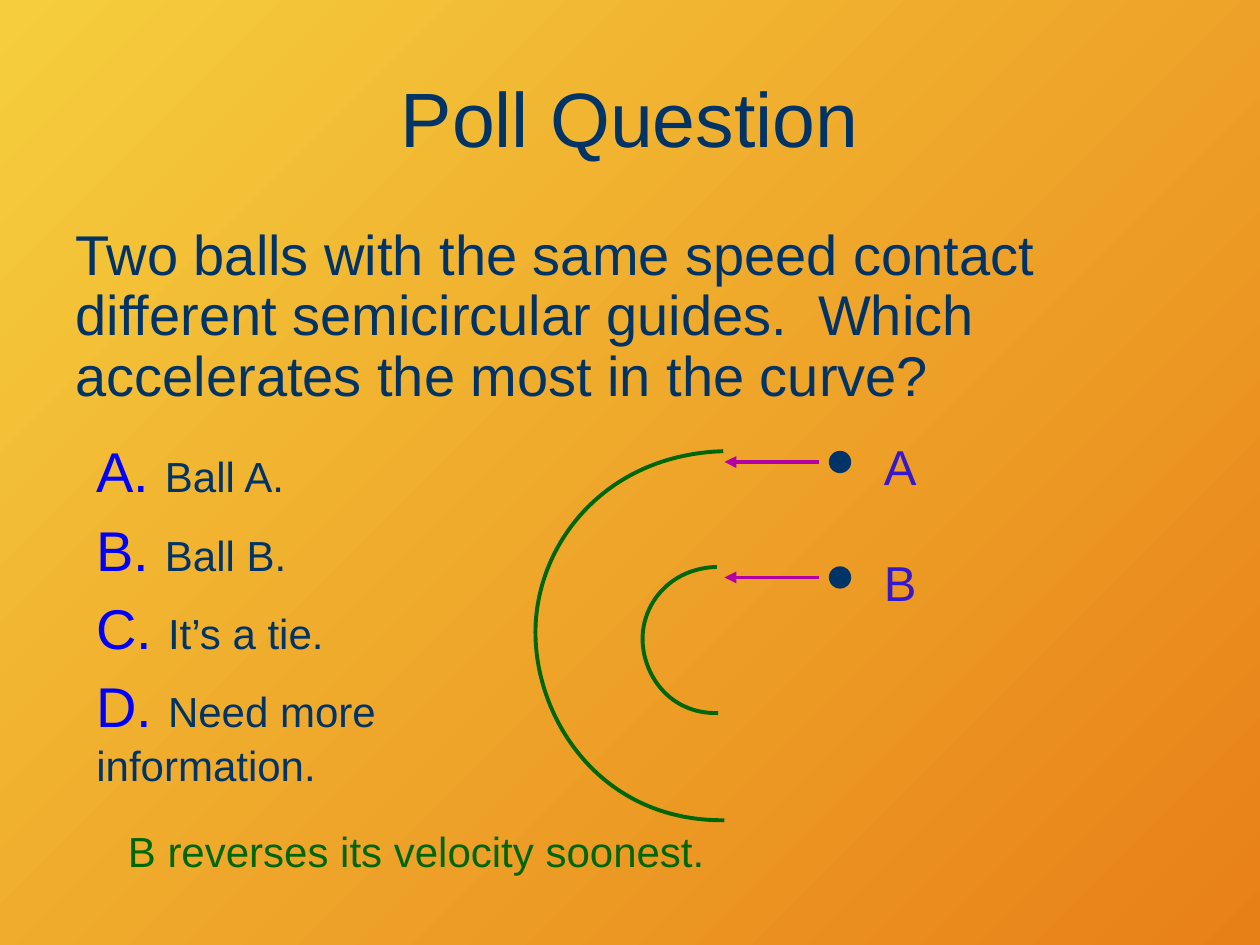
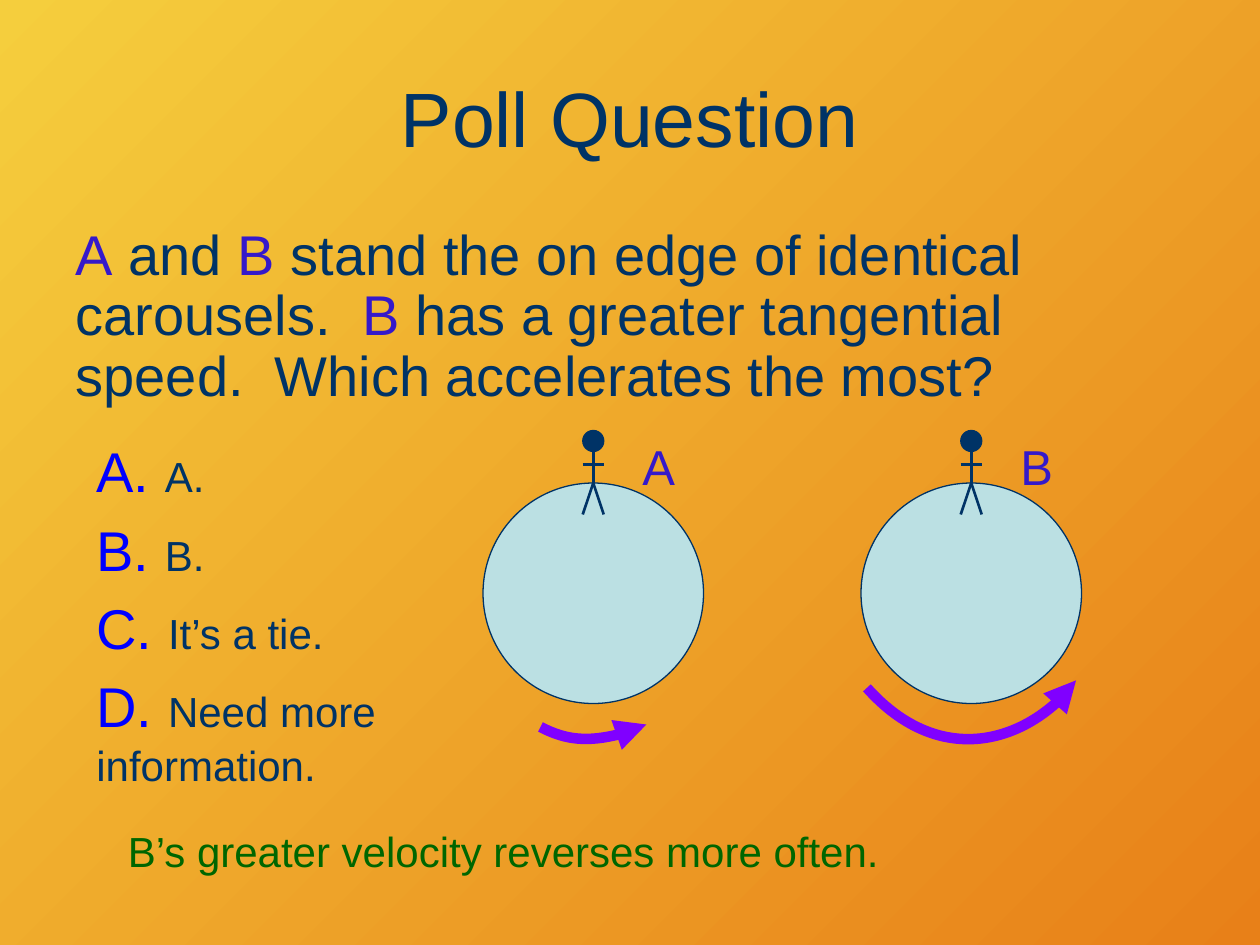
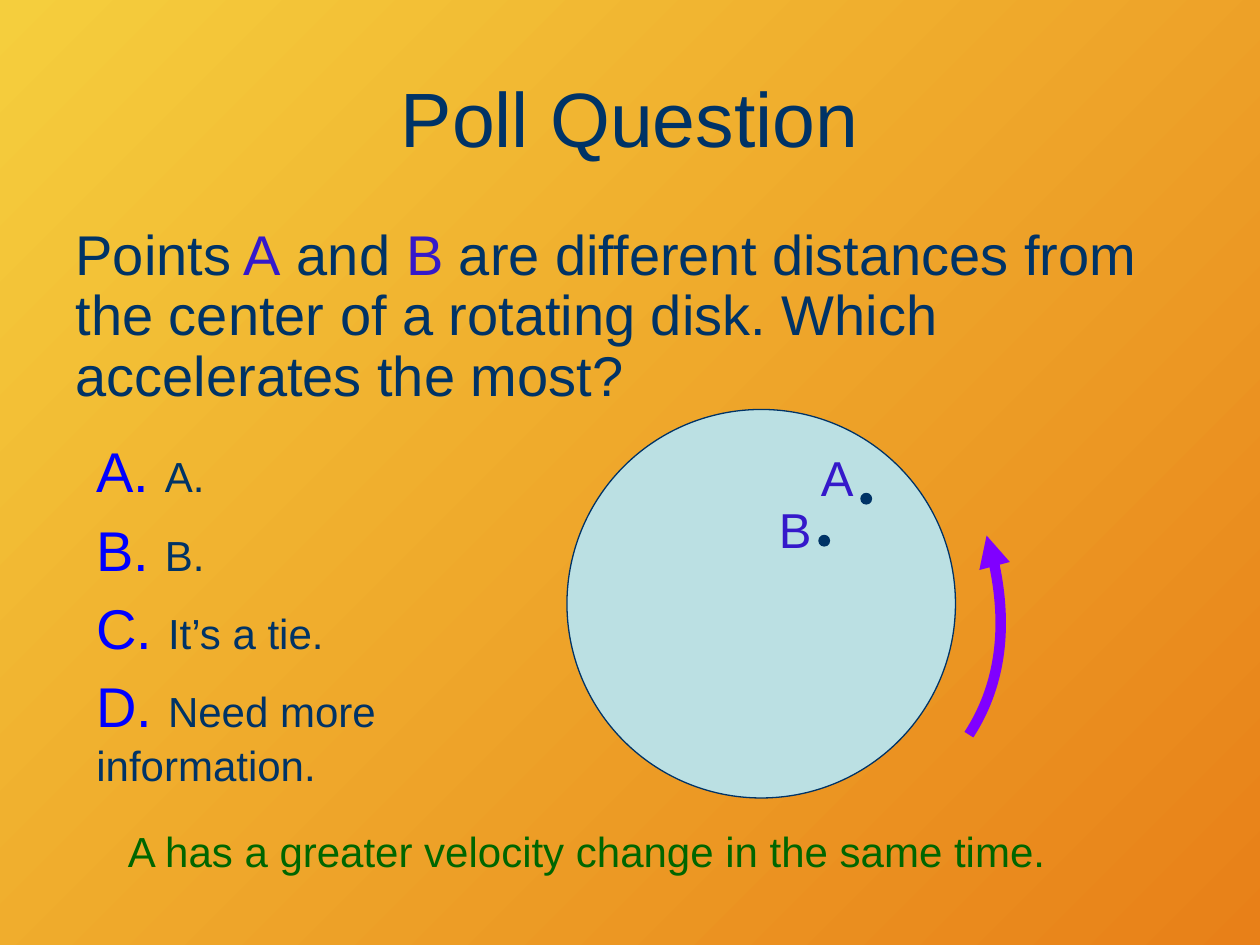
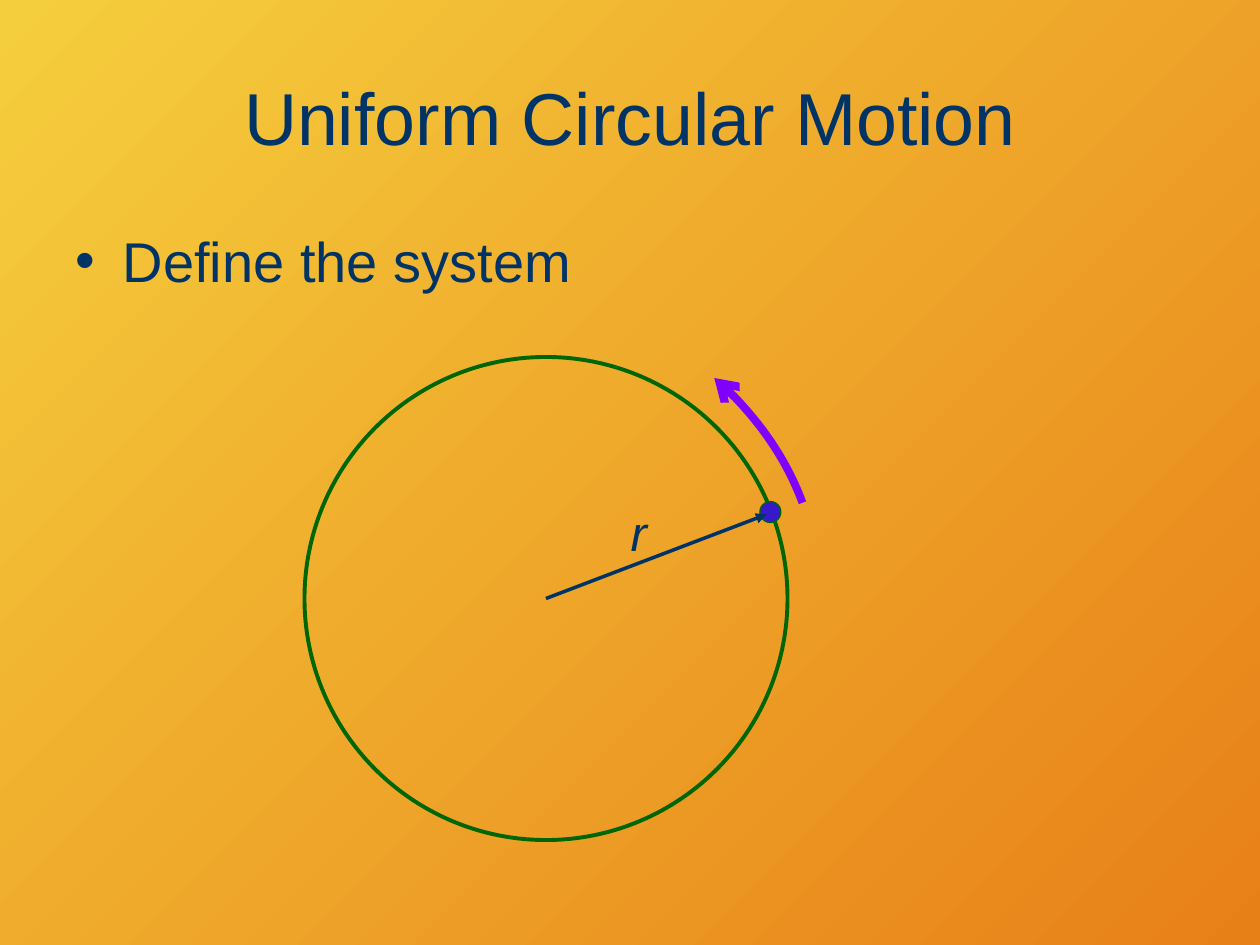
import dataclasses

import lxml.etree
import pptx
import pptx.dml.color
import pptx.enum.shapes
import pptx.enum.text
import pptx.oxml.ns
import pptx.util

Pt = pptx.util.Pt
qn = pptx.oxml.ns.qn
rgb = pptx.dml.color.RGBColor.from_string


@dataclasses.dataclass(frozen=True)
class Theme:
    font: str = "Arial"
    sky_start: str = "F5CE3D"
    sky_end: str = "E88018"
    ink: str = "003366"
    accent: str = "3519CA"
    letter: str = "0000FF"
    green: str = "006600"
    velocity: str = "B300A4"
    spin: str = "8000FF"
    disk: str = "BBE0E3"
    title_size: int = 44
    long_title_size: int = 42
    body_size: int = 32
    label_size: int = 28
    choice_size: int = 24


theme = Theme()


def write(frame, paragraphs, space_before):
    frame.word_wrap = True
    for index, pieces in enumerate(paragraphs):
        paragraph = frame.paragraphs[0] if index == 0 else frame.add_paragraph()
        for text, size, color in pieces:
            run = paragraph.add_run()
            run.text = text
            run.font.name = theme.font
            run.font.size = Pt(size)
            run.font.color.rgb = rgb(color)
        paragraph.space_before = Pt(0)
        spacing = paragraph._p.get_or_add_pPr().find(qn("a:spcBef"))
        spacing.clear()
        lxml.etree.SubElement(spacing, qn("a:spcPct"), val=str(space_before * 1000))


def add_curve(slide, points):
    places = [(Pt(x), Pt(y)) for x, y in points]
    builder = slide.shapes.build_freeform(*places[0])
    builder.add_line_segments(places[1:], close=False)
    curve = builder.convert_to_shape()
    curve.fill.background()
    curve.shadow.inherit = False
    outline = next(curve._element.iter(qn("a:path")))
    segments = outline.findall(qn("a:lnTo"))
    for first in range(0, len(segments), 3):
        bezier = lxml.etree.SubElement(outline, qn("a:cubicBezTo"))
        for segment in segments[first:first + 3]:
            bezier.append(segment[0])
            outline.remove(segment)
    return curve


ink, accent, green = theme.ink, theme.accent, theme.green

carousel_disks, riders = [], []
for left in (276, 492):
    center = left + 63
    carousel_disks += [(left, 276, 126, theme.disk, ink, 0.75), (center - 6, 246, 12, ink, ink, 0.75)]
    limbs = [
        ((center, 258), (center, 276)),
        ((center, 276), (center - 6, 294)),
        ((center, 276), (center + 6, 294)),
        ((center - 6, 265.5), (center + 6, 265.5)),
    ]
    riders += [(start, end, ink, 1.5, None) for start, end in limbs]

lessons = [
    {
        "prompt": [
            ("Two balls with the same speed contact different semicircular guides.  "
             "Which accelerates the most in the curve?", ink),
        ],
        "choices": ("Ball A.", "Ball B."),
        "answer": ("B reverses its velocity soonest.", 348),
        "circles": [(474, y - 6, 12, ink, ink, 0.75) for y in (264, 330)],
        "lines": [((468, y), (414, y), theme.velocity, 2.25, "triangle") for y in (264, 330)],
        "curves": [
            ([(413.3, 257.8), (345.6, 259.9), (306, 311), (306, 361.4),
              (306, 411.1), (343.4, 469.4), (414, 468.7)], green, 2.25, None),
            ([(409.7, 324), (383, 324.7), (367.2, 344.9), (367.2, 365),
              (367.2, 385.2), (382.3, 408.2), (410.4, 407.5)], green, 2.25, None),
        ],
        "labels": [("A", 498, 246), ("B", 498, 312)],
    },
    {
        "prompt": [
            ("A", accent), (" and ", ink), ("B", accent),
            (" stand the on edge of identical carousels.  ", ink), ("B", accent),
            (" has a greater tangential speed.  Which accelerates the most?", ink),
        ],
        "choices": ("A.", "B."),
        "answer": ("B’s greater velocity reverses more often.", 504),
        "circles": carousel_disks,
        "lines": riders,
        "curves": [
            ([(308.9, 415.4), (324, 423.4), (347, 424.8), (369.4, 414)], theme.spin, 6, "triangle"),
            ([(495.4, 393.1), (532.1, 434.2), (589, 426.2), (614.9, 388.8)], theme.spin, 6, "triangle"),
        ],
        "labels": [("A", 360, 246), ("B", 576, 246)],
    },
    {
        "prompt": [
            ("Points", ink), (" A", accent), (" and ", ink), ("B", accent),
            (" are different distances from the center of a rotating disk. Which accelerates the most?", ink),
        ],
        "choices": ("A.", "B."),
        "answer": ("A has a greater velocity change in the same time.", 576),
        "circles": [
            (324, 234, 222, theme.disk, ink, 0.75),
            (492, 282, 6, ink, ink, 0.75),
            (468, 306, 6, ink, ink, 0.75),
        ],
        "lines": [],
        "curves": [
            ([(553.7, 419.8), (571, 393.1), (578.2, 350.6), (563.8, 306)], theme.spin, 6, "triangle"),
        ],
        "labels": [("A", 462, 252), ("B", 438, 282)],
    },
    {
        "prompt": [("Define the system", ink)],
        "circles": [(174, 204, 276, None, green, 2.25), (434.2, 286.6, 12, accent, green, 0.75)],
        "lines": [((312, 342), (438, 294), ink, 2, "triangle")],
        "curves": [
            ([(458.6, 287.3), (449.3, 262.1), (427, 231.1), (408.2, 216)], theme.spin, 4.5, "arrow"),
        ],
        "labels": [("r", 350, 283.7)],
    },
]

deck = pptx.Presentation()
deck.slide_width, deck.slide_height = Pt(720), Pt(540)
sky = deck.slide_master.background.fill
sky.gradient()
sky.gradient_angle = 315
for stop, color in zip(sky.gradient_stops, (theme.sky_start, theme.sky_end)):
    stop.color.rgb = rgb(color)

for lesson in lessons:
    is_poll = "choices" in lesson
    slide = deck.slides.add_slide(deck.slide_layouts[1])
    title, prompt = slide.placeholders
    for holder, top, height in ((title, 21.6, 90), (prompt, 126, 120 if is_poll else 48)):
        holder.left, holder.top, holder.width, holder.height = Pt(36), Pt(top), Pt(648), Pt(height)
        holder.text_frame.auto_size = pptx.enum.text.MSO_AUTO_SIZE.NONE
    heading = ("Poll Question", theme.title_size) if is_poll else ("Uniform Circular Motion", theme.long_title_size)
    write(title.text_frame, [[(*heading, ink)]], 0)
    write(prompt.text_frame, [[(text, theme.body_size, color) for text, color in lesson["prompt"]]], 20)

    for left, top, size, fill, edge, weight in lesson["circles"]:
        circle = slide.shapes.add_shape(
            pptx.enum.shapes.MSO_SHAPE.OVAL, Pt(left), Pt(top), Pt(size), Pt(size))
        circle.shadow.inherit = False
        circle.line.color.rgb = rgb(edge)
        circle.line.width = Pt(weight)
        if fill:
            circle.fill.solid()
            circle.fill.fore_color.rgb = rgb(fill)
        else:
            circle.fill.background()

    strokes = []
    for start, end, *style in lesson["lines"]:
        segment = slide.shapes.add_connector(
            pptx.enum.shapes.MSO_CONNECTOR.STRAIGHT, *(Pt(value) for value in start + end))
        strokes.append((segment, *style))
    for points, *style in lesson["curves"]:
        strokes.append((add_curve(slide, points), *style))
    for stroke, color, weight, arrowhead in strokes:
        stroke.line.color.rgb = rgb(color)
        stroke.line.width = Pt(weight)
        properties = stroke._element.spPr
        if arrowhead:
            lxml.etree.SubElement(properties.find(qn("a:ln")), qn("a:tailEnd"), type=arrowhead)
        if properties.find(qn("a:effectLst")) is None:
            lxml.etree.SubElement(properties, qn("a:effectLst"))

    label_color, label_width = (accent, 36) if is_poll else (ink, 30)
    captions = [
        (left, top, label_width, 41, [[(text, theme.label_size, label_color)]], 50)
        for text, left, top in lesson["labels"]
    ]
    if is_poll:
        prompt_line = prompt.text_frame.paragraphs[0]
        prompt_line.line_spacing = 0.9
        indents = prompt_line._p.get_or_add_pPr()
        indents.set("marL", "0")
        indents.set("indent", "0")
        lxml.etree.SubElement(indents, qn("a:buNone"))
        choices = [
            [(f"{letter}. ", theme.body_size, theme.letter), (text, theme.choice_size, ink)]
            for letter, text in zip("ABCD", (*lesson["choices"], "It’s a tie.", "Need more information."))
        ]
        answer, answer_width = lesson["answer"]
        captions.append((48, 246, 204, 212.4, choices, 20))
        captions.append((66, 468, answer_width, 36, [[(answer, theme.choice_size, green)]], 50))
    for left, top, width, height, paragraphs, space_before in captions:
        caption = slide.shapes.add_textbox(Pt(left), Pt(top), Pt(width), Pt(height))
        caption.text_frame.auto_size = pptx.enum.text.MSO_AUTO_SIZE.SHAPE_TO_FIT_TEXT
        write(caption.text_frame, paragraphs, space_before)
        if not is_poll:
            symbol = caption.text_frame.paragraphs[0]
            symbol.alignment = pptx.enum.text.PP_ALIGN.CENTER
            symbol.runs[0].font.italic = True

deck.save("out.pptx")
